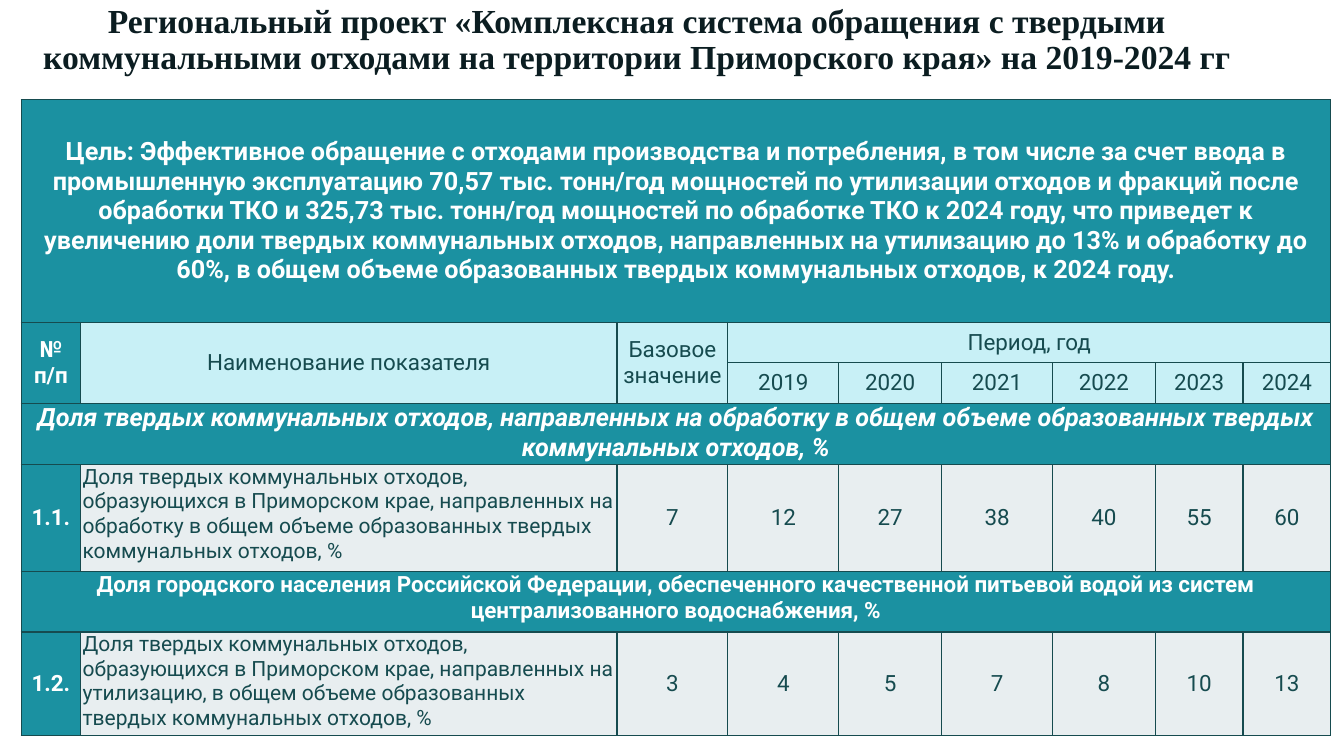
from dataclasses import dataclass

from lxml.etree import SubElement
from pptx import Presentation
from pptx.dml.color import RGBColor
from pptx.enum.text import MSO_ANCHOR, PP_ALIGN
from pptx.oxml.ns import qn
from pptx.util import Inches, Pt

TEAL, PALE, GREY = "1B91A1", "C8F0F6", "E8EEF0"
WHITE, DARK, INK = "FFFFFF", "164B4F", "0B1D21"
COLS = [0.59, 5.32, 1.1, 1.1, 1.02, 1.1, 1.02, 0.87, 0.87]
ROWS = [2.21, 0.4, 0.4, 0.61, 1.06, 0.6, 1.03]
YEARS = range(2019, 2025)

TITLE = (
    "Региональный проект «Комплексная система обращения с твердыми "
    "коммунальными отходами на территории Приморского края» на 2019-2024 гг"
)
GOAL = (
    "Цель: Эффективное обращение с отходами производства и потребления, в том числе "
    "за счет ввода в промышленную эксплуатацию 70,57 тыс. тонн/год мощностей по "
    "утилизации отходов и фракций после обработки ТКО и 325,73 тыс. тонн/год мощностей "
    "по обработке ТКО к 2024 году, что приведет к увеличению доли твердых коммунальных "
    "отходов, направленных на утилизацию до 13% и обработку до 60%, в общем объеме "
    "образованных твердых коммунальных отходов, к 2024 году."
)
PROCESSING_HEAD = (
    "Доля твердых коммунальных отходов, направленных на обработку в общем объеме "
    "образованных твердых коммунальных отходов, %"
)
WATER_HEAD = (
    "Доля городского населения Российской Федерации, обеспеченного качественной "
    "питьевой водой из систем централизованного водоснабжения, %"
)
PROCESSING = (
    "Доля твердых коммунальных отходов, образующихся в Приморском крае, направленных "
    "на обработку в общем объеме образованных твердых коммунальных отходов, %"
)
RECYCLING = (
    "Доля твердых коммунальных отходов, образующихся в Приморском крае, направленных "
    "на утилизацию, в общем объеме образованных твердых коммунальных отходов, %"
)


@dataclass
class Style:
    """Look of one kind of table cell."""

    fill: str
    color: str = DARK
    size: int = 16
    bold: bool = False
    italic: bool = False
    inset: float = 0.06
    align: PP_ALIGN = PP_ALIGN.CENTER
    anchor: MSO_ANCHOR = MSO_ANCHOR.MIDDLE


BANNER = Style(TEAL, WHITE, 18, True)
NUMBER = Style(TEAL, WHITE, bold=True)
HEADER = Style(PALE)
BASE_HEADER = Style(PALE, inset=0.04)
ITALIC_HEAD = Style(TEAL, WHITE, 18, True, True, anchor=MSO_ANCHOR.TOP)
PLAIN_HEAD = Style(TEAL, WHITE, bold=True, anchor=MSO_ANCHOR.TOP)
INDICATOR = Style(GREY, size=15, inset=0.02, align=PP_ALIGN.LEFT, anchor=MSO_ANCHOR.TOP)
VALUE = Style(GREY, inset=0.02)


def rgb(value):
    """Turn a hex string into a colour."""
    return RGBColor.from_string(value)


def set_font(p, name, size, color, bold, italic=False):
    """Format every run of a paragraph."""
    for r in p.runs:
        r.font.name, r.font.size = name, Pt(size)
        r.font.bold, r.font.italic = bold, italic
        r.font.color.rgb = rgb(color)


def add_borders(cell):
    """Draw a thin dark line on all four sides of a cell."""
    tc_pr = cell._tc.get_or_add_tcPr()
    for side in "LRTB":
        ln = SubElement(tc_pr, qn(f"a:ln{side}"), w=str(Pt(1)))
        fill = SubElement(ln, qn("a:solidFill"))
        SubElement(fill, qn("a:srgbClr"), val=DARK)


def fill_cell(table, row, col, text, style, rows=1, cols=1):
    """Write one styled cell, merged over the given rows and columns."""
    cell = table.cell(row, col)
    if rows * cols > 1:
        cell.merge(table.cell(row + rows - 1, col + cols - 1))
    cell.fill.solid()
    cell.fill.fore_color.rgb = rgb(style.fill)
    cell.margin_left = cell.margin_right = Inches(style.inset)
    cell.vertical_anchor = style.anchor
    cell.text_frame.text = text
    p = cell.text_frame.paragraphs[0]
    p.alignment = style.align
    set_font(p, "Roboto", style.size, style.color, style.bold, style.italic)


def fill_indicator(table, row, number, name, values):
    """Write a numbered indicator with its base and yearly values."""
    fill_cell(table, row, 0, number, NUMBER)
    fill_cell(table, row, 1, name, INDICATOR)
    for col, value in enumerate(values, 2):
        fill_cell(table, row, col, str(value), VALUE)


def add_grid(s):
    """Add the bordered table with its column and row sizes."""
    table = s.shapes.add_table(
        len(ROWS), len(COLS), Inches(0.21), Inches(0.99),
        Inches(sum(COLS)), Inches(sum(ROWS)),
    ).table
    for column, width in zip(table.columns, COLS):
        column.width = Inches(width)
    for row, height in zip(table.rows, ROWS):
        row.height = Inches(height)
    for cell in table.iter_cells():
        cell.margin_top = cell.margin_bottom = 0
        add_borders(cell)
    return table


def add_title(s):
    """Add the slide heading."""
    sp = s.shapes.add_textbox(Inches(0.21), Inches(0.18), Inches(12.21), Inches(0.63))
    tf = sp.text_frame
    tf.word_wrap = True
    tf.vertical_anchor = MSO_ANCHOR.BOTTOM
    tf.text = TITLE
    p = tf.paragraphs[0]
    p.alignment, p.line_spacing = PP_ALIGN.CENTER, 0.9
    set_font(p, "Times New Roman", 24, INK, True)


def main():
    """Build the slide and save it."""
    prs = Presentation()
    prs.slide_width, prs.slide_height = Inches(13.33), Inches(7.5)
    s = prs.slides.add_slide(prs.slide_layouts[6])
    table = add_grid(s)
    fill_cell(table, 0, 0, GOAL, BANNER, cols=9)
    fill_cell(table, 1, 0, "№ п/п", NUMBER, rows=2)
    fill_cell(table, 1, 1, "Наименование показателя", HEADER, rows=2)
    fill_cell(table, 1, 2, "Базовое значение", BASE_HEADER, rows=2)
    fill_cell(table, 1, 3, "Период, год", HEADER, cols=6)
    for col, year in enumerate(YEARS, 3):
        fill_cell(table, 2, col, str(year), HEADER)
    fill_cell(table, 3, 0, PROCESSING_HEAD, ITALIC_HEAD, cols=9)
    fill_indicator(table, 4, "1.1.", PROCESSING, [7, 12, 27, 38, 40, 55, 60])
    fill_cell(table, 5, 0, WATER_HEAD, PLAIN_HEAD, cols=9)
    fill_indicator(table, 6, "1.2.", RECYCLING, [3, 4, 5, 7, 8, 10, 13])
    add_title(s)
    prs.save("out.pptx")


if __name__ == "__main__":
    main()
